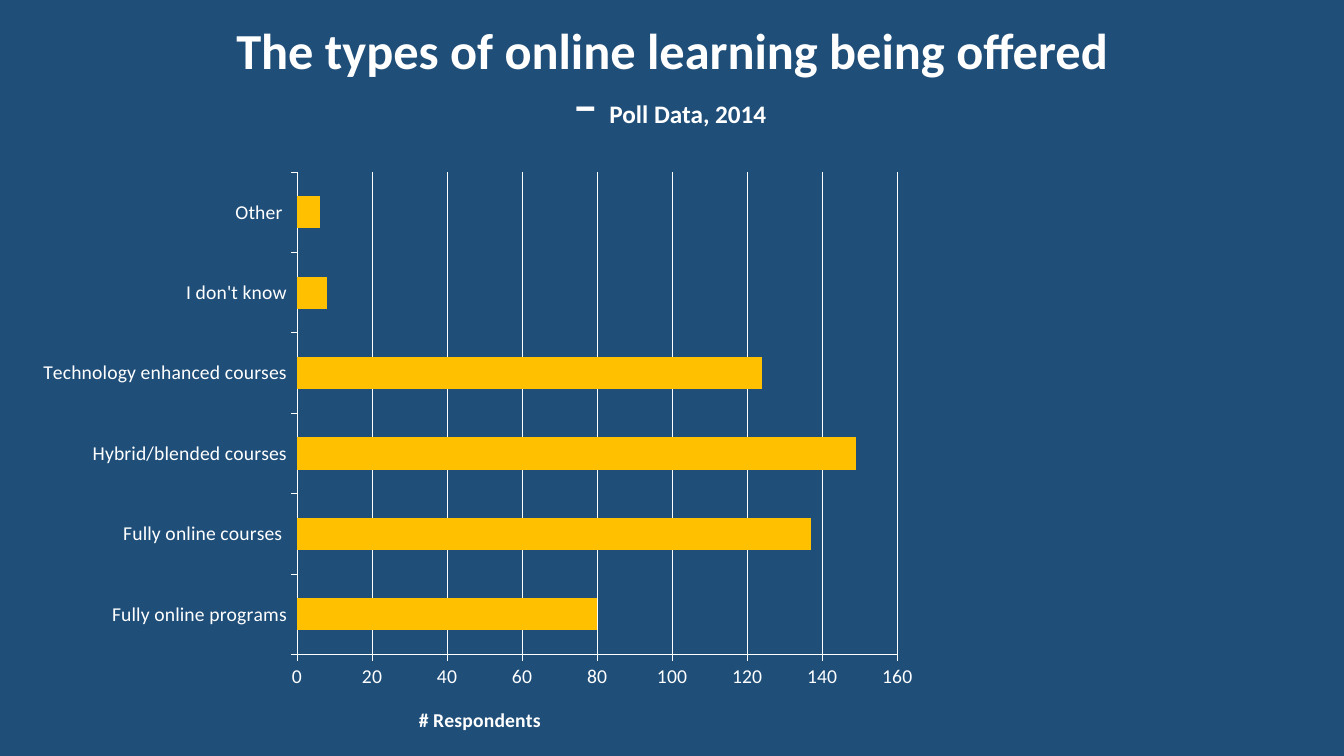
from lxml.etree import SubElement
from pptx import Presentation
from pptx.chart.data import CategoryChartData
from pptx.dml.color import RGBColor
from pptx.enum.chart import XL_CHART_TYPE, XL_TICK_MARK
from pptx.enum.text import MSO_ANCHOR, MSO_AUTO_SIZE, PP_ALIGN
from pptx.oxml.ns import qn
from pptx.util import Inches, Pt

FONT = "Calibri"
WHITE, NAVY, GOLD = "FFFFFF", "1F4E79", "FFC000"
TITLE_RUNS = [
    ("The types of online learning being offered – ", 36),
    ("Poll Data, 2014 ", 18),
]
RESPONDENTS = {
    "Fully online programs": 80,
    "Fully online courses ": 137,
    "Hybrid/blended courses": 149,
    "Technology enhanced courses": 124,
    "I don't know": 8,
    "Other ": 6,
}
PLOT_LAYOUT = {"x": 0.3, "y": 0.02, "w": 0.66, "h": 0.81}
AXIS_TITLE_LAYOUT = {"x": 0.43, "y": 0.91}


def color(hex_code):
    return RGBColor.from_string(hex_code)


def style_font(font, size, bold=False):
    font.name = FONT
    font.size = Pt(size)
    font.bold = bold
    font.color.rgb = color(WHITE)


def set_layout(layout, fractions, inner=False):
    """Fix a chart part at fractions of the chart's width and height."""
    for child in list(layout):
        layout.remove(child)
    manual = SubElement(layout, qn("c:manualLayout"))
    if inner:
        SubElement(manual, qn("c:layoutTarget")).set("val", "inner")
    for side in ("x", "y"):
        SubElement(manual, qn(f"c:{side}Mode")).set("val", "edge")
    for side, fraction in fractions.items():
        SubElement(manual, qn(f"c:{side}")).set("val", str(fraction))


def child_layout(parent, following):
    """Return the parent's layout element, adding it before the named element."""
    layout = parent.find(qn("c:layout"))
    if layout is None:
        layout = SubElement(parent, qn("c:layout"))
        parent.find(qn(following)).addprevious(layout)
    return layout


def add_title(slide):
    title = slide.shapes.title
    title.left, title.top = Inches(2.17), Inches(0.17)
    title.width, title.height = Inches(9), Inches(1.25)
    frame = title.text_frame
    frame.word_wrap = True
    frame.auto_size = MSO_AUTO_SIZE.NONE
    frame.vertical_anchor = MSO_ANCHOR.MIDDLE
    paragraph = frame.paragraphs[0]
    paragraph.alignment = PP_ALIGN.CENTER
    paragraph.line_spacing = 0.9
    for text, size in TITLE_RUNS:
        run = paragraph.add_run()
        run.text = text
        style_font(run.font, size, bold=True)


def add_respondent_chart(slide):
    data = CategoryChartData()
    data.categories = list(RESPONDENTS)
    data.add_series("Series 1", list(RESPONDENTS.values()))
    chart = slide.shapes.add_chart(
        XL_CHART_TYPE.BAR_CLUSTERED,
        Inches(0.24), Inches(1.59), Inches(9.02), Inches(5.91), data,
    ).chart
    chart.has_legend = False
    chart.has_title = False
    style_font(chart.font, 14)

    plot = chart.plots[0]
    plot.gap_width = 150
    plot.vary_by_categories = False
    fill = plot.series[0].format.fill
    fill.solid()
    fill.fore_color.rgb = color(GOLD)

    value_axis = chart.value_axis
    value_axis.minimum_scale, value_axis.maximum_scale = 0, 160
    value_axis.major_unit = 20
    value_axis.has_major_gridlines = True
    for axis in (chart.category_axis, value_axis):
        axis.major_tick_mark = XL_TICK_MARK.OUTSIDE
        axis.minor_tick_mark = XL_TICK_MARK.NONE
    for part in (chart.category_axis, value_axis, value_axis.major_gridlines):
        part.format.line.color.rgb = color(WHITE)
        part.format.line.width = Pt(0.75)

    axis_title = value_axis.axis_title
    run = axis_title.text_frame.paragraphs[0].add_run()
    run.text = "# Respondents"
    style_font(run.font, 14, bold=True)

    plot_area = chart.element.find(".//" + qn("c:plotArea"))
    set_layout(child_layout(plot_area, "c:barChart"), PLOT_LAYOUT, inner=True)
    title_element = plot_area.find(".//" + qn("c:title"))
    set_layout(child_layout(title_element, "c:overlay"), AXIS_TITLE_LAYOUT)


def main():
    presentation = Presentation()
    presentation.slide_width = Inches(13.33)
    presentation.slide_height = Inches(7.5)
    slide = presentation.slides.add_slide(presentation.slide_layouts[5])
    background = slide.background.fill
    background.solid()
    background.fore_color.rgb = color(NAVY)
    add_title(slide)
    add_respondent_chart(slide)
    presentation.save("out.pptx")


if __name__ == "__main__":
    main()
